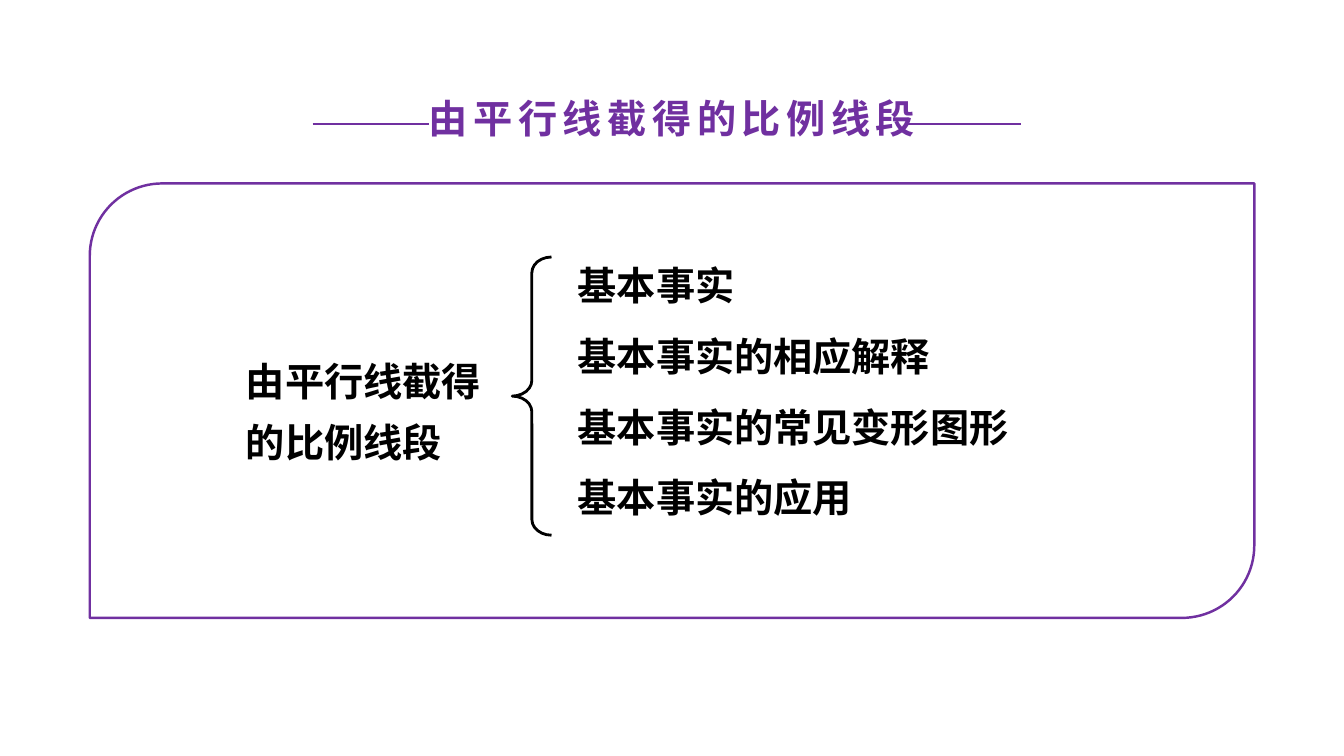
import pptx
import pptx.util
import pptx.dml.color
import pptx.enum.shapes
import pptx.enum.text
import pptx.oxml.ns
import lxml.etree

TOPIC = "由平行线截得的比例线段"
POINTS = ["基本事实", "基本事实的相应解释", "基本事实的常见变形图形", "基本事实的应用"]
FONT, SIZE = "Noto Sans CJK SC", 28
PURPLE, BLACK = "7030A0", "000000"
WIDTH, HEIGHT = 13.33, 7.5

# left, top, width, height in inches
FRAME = (0.89, 1.82, 11.55, 4.31)
TITLE = (4.04, 0.85, 5.25, 0.63)
LABEL = (2.34, 3.36, 2.82, 1.24)
BRACE = (5.08, 2.55, 0.39, 2.76)
LIST = (5.63, 2.31, 4.54, 2.91)
RULE_Y, RULE_LENGTH, RULE_STARTS = 1.23, 1.15, (3.1, 8.98)

inches = pptx.util.Inches
points = pptx.util.Pt
SHAPES = pptx.enum.shapes.MSO_SHAPE
ANCHOR = pptx.enum.text.MSO_ANCHOR
ALIGN = pptx.enum.text.PP_ALIGN
qn = pptx.oxml.ns.qn


def color(value):
    return pptx.dml.color.RGBColor.from_string(value)


def place(shape, box):
    shape.left, shape.top, shape.width, shape.height = map(inches, box)


def write(shape, lines, tint, pitch=None, align=ALIGN.LEFT, anchor=ANCHOR.TOP, tracking=0):
    """Fill a shape with bold lines; pitch is the line distance in points."""
    frame = shape.text_frame
    frame.text = "\n".join(lines)
    frame.word_wrap = True
    frame.auto_size = pptx.enum.text.MSO_AUTO_SIZE.NONE
    frame.vertical_anchor = anchor
    for para in frame.paragraphs:
        para.alignment = align
        para.space_before = points(0)
        if pitch:
            para.line_spacing = points(pitch)
        settings = para._p.get_or_add_pPr()
        settings.set("marL", "0")
        settings.set("indent", "0")
        lxml.etree.SubElement(settings, qn("a:buNone"))
        for span in para.runs:
            span.font.name, span.font.size, span.font.bold = FONT, points(SIZE), True
            span.font.color.rgb = color(tint)
            properties = span.font._element
            lxml.etree.SubElement(properties, qn("a:ea")).set("typeface", FONT)
            if tracking:
                properties.set("spc", str(tracking * 100))


def add_outline(page, kind, box, tint, weight):
    shape = page.shapes.add_shape(kind, *map(inches, box))
    shape.shadow.inherit = False
    shape.fill.background()
    shape.line.color.rgb = color(tint)
    shape.line.width = points(weight)
    return shape


def add_rule(page, start):
    rule = page.shapes.add_connector(
        pptx.enum.shapes.MSO_CONNECTOR.STRAIGHT,
        *map(inches, (start, RULE_Y, start + RULE_LENGTH, RULE_Y)))
    rule.line.color.rgb = color(PURPLE)
    rule.line.width = points(1)
    lxml.etree.SubElement(rule._element.spPr, qn("a:effectLst"))


def main():
    deck = pptx.Presentation()
    deck.slide_width, deck.slide_height = inches(WIDTH), inches(HEIGHT)
    page = deck.slides.add_slide(deck.slide_layouts[1])

    add_outline(page, SHAPES.ROUND_2_DIAG_RECTANGLE, FRAME, PURPLE, 1.75)
    for start in RULE_STARTS:
        add_rule(page, start)
    brace = add_outline(page, SHAPES.LEFT_BRACE, BRACE, BLACK, 2)
    brace.adjustments[0] = 0.4

    title = page.shapes.title
    place(title, TITLE)
    write(title, [TOPIC], PURPLE, align=ALIGN.CENTER, anchor=ANCHOR.MIDDLE, tracking=4)

    label = page.shapes.add_textbox(*map(inches, LABEL))
    write(label, [TOPIC], BLACK, pitch=43.6)

    body = page.placeholders[1]
    place(body, LIST)
    write(body, POINTS, BLACK, pitch=50.5)

    deck.save("out.pptx")


if __name__ == "__main__":
    main()
